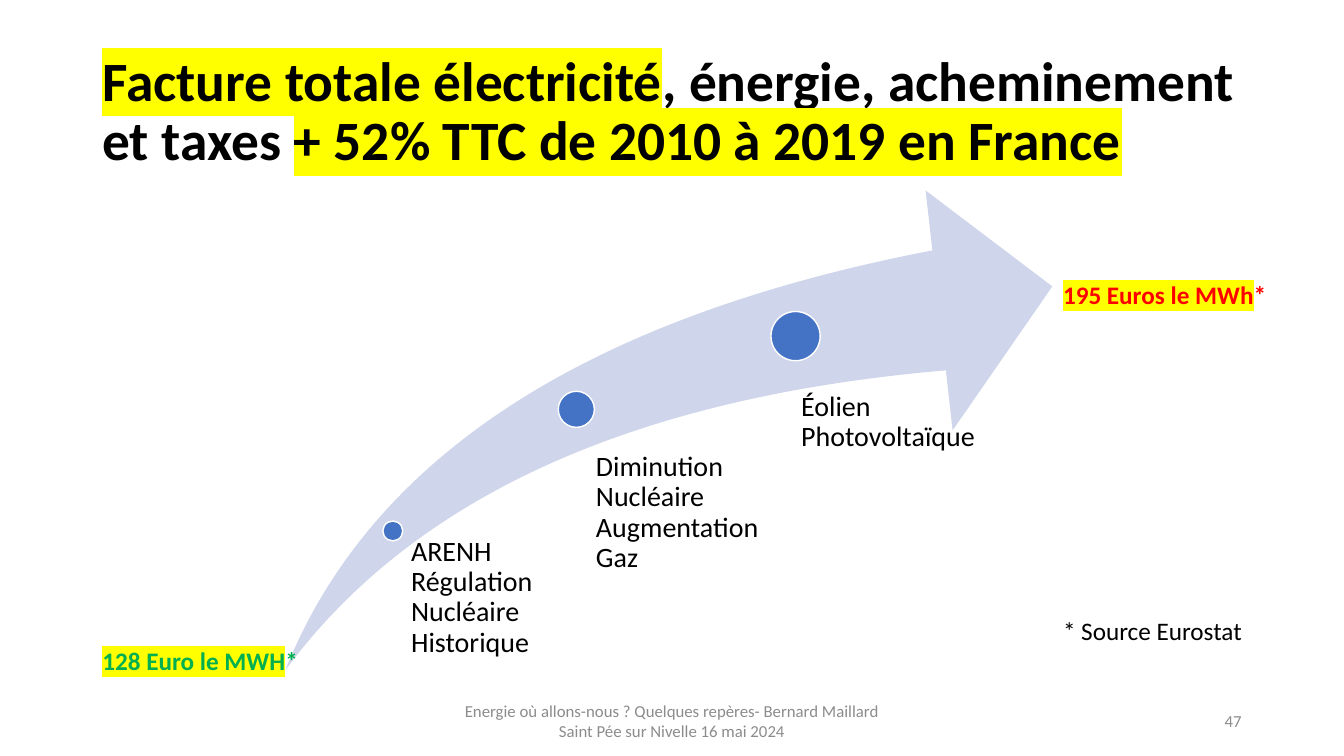
from lxml import etree
from pptx import Presentation
from pptx.dml.color import RGBColor
from pptx.enum.shapes import MSO_SHAPE
from pptx.enum.text import MSO_ANCHOR, PP_ALIGN
from pptx.oxml.ns import qn
from pptx.util import Cm, Pt

BLACK = RGBColor(0x00, 0x00, 0x00)
WHITE = RGBColor(0xFF, 0xFF, 0xFF)
GREY = RGBColor(0x8C, 0x8C, 0x8C)
GREEN = RGBColor(0x00, 0xB0, 0x50)
RED = RGBColor(0xFF, 0x00, 0x00)
YELLOW = RGBColor(0xFF, 0xFF, 0x00)
BLUE = RGBColor(0x44, 0x72, 0xC4)
PALE_BLUE = RGBColor(0xCF, 0xD5, 0xEA)

# Dot: left, top, diameter. Label: left, top, width, height, left inset.
MILESTONES = [
    ((9.65, 13.13, 0.5), (10.11, 13.54, 4.5, 3.5, 0.25),
     "ARENH Régulation Nucléaire Historique"),
    ((14.07, 9.86, 0.91), (14.53, 11.4, 4.65, 3.5, 0.49),
     "Diminution Nucléaire Augmentation Gaz"),
    ((19.43, 7.85, 1.24), (19.53, 9.88, 5.51, 2, 0.66),
     "Éolien Photovoltaïque"),
]


def highlight(run):
    """Put a yellow marker behind a run whose colour is already set."""
    marker = etree.Element(qn("a:highlight"))
    etree.SubElement(marker, qn("a:srgbClr"), val=str(YELLOW))
    run.font.fill  # the marker must follow the fill in the run properties
    run._r.rPr.find(qn("a:solidFill")).addnext(marker)


def add_text(slide, box, pieces, size, color=BLACK, bold=False, wrap=True,
             align=PP_ALIGN.LEFT, anchor=MSO_ANCHOR.TOP):
    """Add a text box; pieces are (text, is_highlighted) pairs."""
    text_box = slide.shapes.add_textbox(*map(Cm, box))
    frame = text_box.text_frame
    frame.word_wrap = wrap
    frame.vertical_anchor = anchor
    paragraph = frame.paragraphs[0]
    paragraph.alignment = align
    for text, is_highlighted in pieces:
        run = paragraph.add_run()
        run.text = text
        run.font.name = "Calibri"
        run.font.size = Pt(size)
        run.font.bold = bold
        run.font.color.rgb = color
        if is_highlighted:
            highlight(run)
    return frame


def add_shape(slide, kind, box, fill):
    shape = slide.shapes.add_shape(kind, *map(Cm, box))
    shape.shadow.inherit = False
    shape.fill.solid()
    shape.fill.fore_color.rgb = fill
    shape.line.fill.background()
    return shape


def add_milestone(slide, dot, label, text):
    left, top, diameter = dot
    circle = add_shape(slide, MSO_SHAPE.OVAL, (left, top, diameter, diameter), BLUE)
    circle.line.color.rgb = WHITE
    circle.line.width = Pt(1)

    *box, inset = label
    frame = add_text(slide, box, [(text, False)], 20)
    frame.margin_left = Cm(inset)
    frame.margin_top = frame.margin_right = frame.margin_bottom = 0
    frame.paragraphs[0].line_spacing = 0.9


def add_footer(slide, box, text, align):
    add_text(slide, box, [(text, False)], 12, GREY, align=align,
             anchor=MSO_ANCHOR.MIDDLE)


def main():
    presentation = Presentation()
    presentation.slide_width = Cm(33.87)
    presentation.slide_height = Cm(19.05)
    slide = presentation.slides.add_slide(presentation.slide_layouts[6])

    title = add_text(slide, (2.33, 1.01, 29.21, 3.68), [
        ("Facture totale électricité", True),
        (", énergie, acheminement et taxes ", False),
        ("+ 52% TTC de 2010 à 2019 en France", True),
    ], 39.6, bold=True, anchor=MSO_ANCHOR.MIDDLE)
    title.paragraphs[0].line_spacing = 0.9

    arrow = add_shape(slide, MSO_SHAPE.SWOOSH_ARROW, (7.19, 4.8, 19.33, 12.09), PALE_BLUE)
    arrow.adjustments[0] = 0.25
    arrow.adjustments[1] = 0.25
    for dot, label, text in MILESTONES:
        add_milestone(slide, dot, label, text)

    add_text(slide, (2.33, 16.13, 5.49, 1.03),
             [("128 Euro le MWH", True), ("*", False)], 18, GREEN, True, wrap=False)
    add_text(slide, (26.54, 6.91, 5.69, 1.03),
             [("195 Euros le MWh", True), ("*", False)], 18, RED, True, wrap=False)
    add_text(slide, (26.54, 15.39, 5.08, 1.03),
             [("* Source Eurostat", False)], 18, wrap=False)

    add_footer(slide, (11.22, 17.66, 11.43, 1.01),
               "Energie où allons-nous ? Quelques repères- Bernard Maillard "
               "Saint Pée sur Nivelle 16 mai 2024", PP_ALIGN.CENTER)
    add_footer(slide, (23.92, 17.66, 7.62, 1.01), "47", PP_ALIGN.RIGHT)

    presentation.save("out.pptx")


if __name__ == "__main__":
    main()
